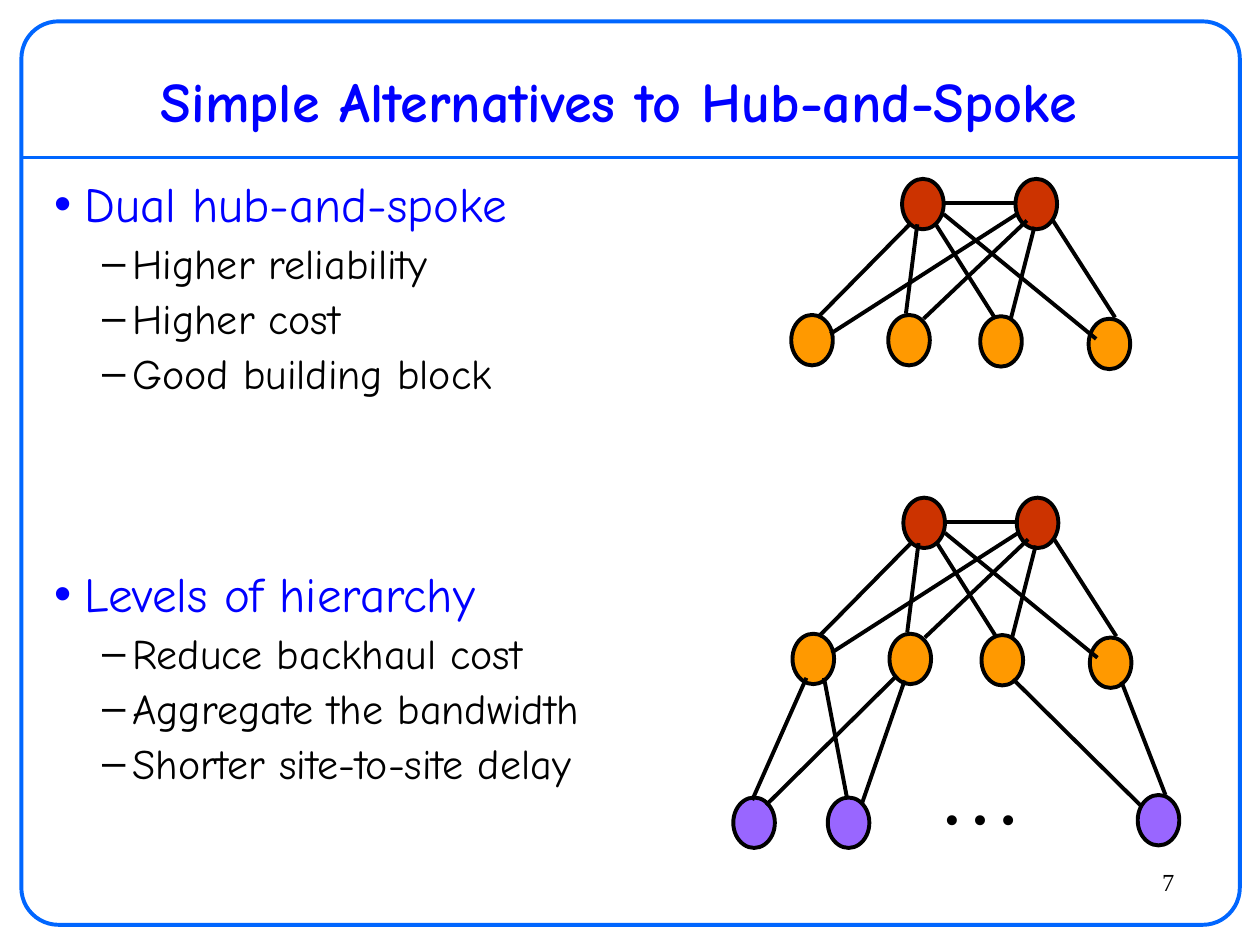
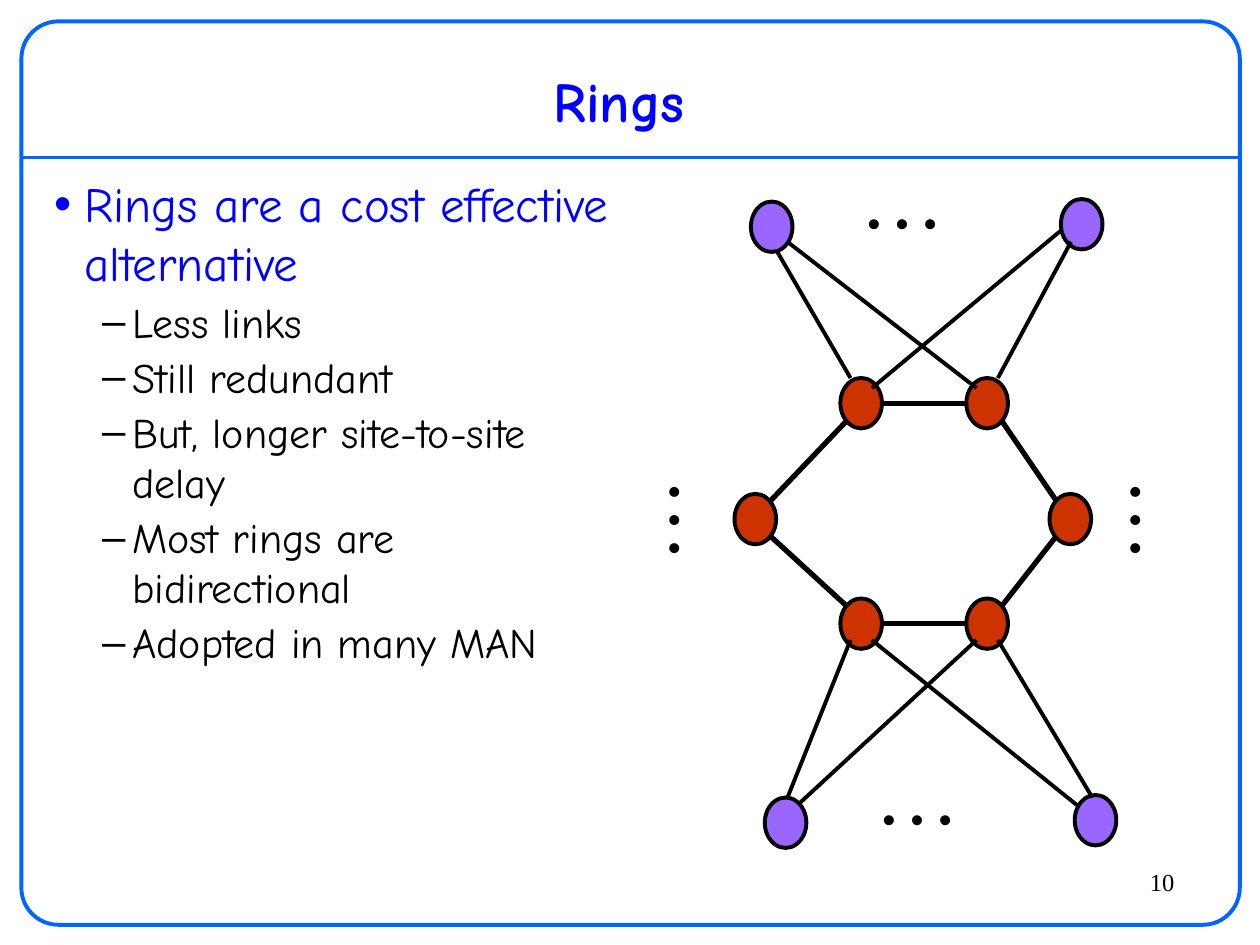
import pptx
import pptx.dml.color
import pptx.enum.shapes
import pptx.enum.text
import pptx.util
from lxml import etree
from pptx.oxml.ns import qn
from pptx.util import Inches, Pt

# Shared style
HEADING_FONT, NUMBER_FONT = "Comic Neue", "Times New Roman"
BLUE, FRAME_BLUE, BLACK = "0000FF", "0066FF", "000000"
HUB, SPOKE, SITE = "CC3300", "FF9900", "9966FF"
NODE_WIDTH, NODE_HEIGHT = 0.33, 0.4
LINK_WIDTH, RING_WIDTH = 2.25, 3
ELLIPSIS_SIZE, VERTICAL_ELLIPSIS_SIZE = (0.87, 0.9), (1.01, 0.77)
# Per list level: bullet, left margin, size, colour, space before
LEVELS = [("•", 0.24, 28, BLUE, 0), ("–", 0.62, 24, BLACK, 2.6)]
HANGING = 0.24
SECTION_GAP = 95

# A pair of hubs serving four spokes; nodes are (left, top)
DUAL_HUB_NODES = {
    HUB: [(7.16, 1.42), (8.06, 1.42)],
    SPOKE: [(6.28, 2.5), (7.05, 2.5), (7.78, 2.51), (8.64, 2.53)],
}
DUAL_HUB_LINKS = [
    (7.5, 1.61, 8.07, 1.61),
    (7.23, 1.77, 6.49, 2.52), (7.28, 1.78, 7.19, 2.49),
    (7.42, 1.77, 7.9, 2.53), (7.49, 1.7, 8.7, 2.69),
    (8.07, 1.7, 6.59, 2.65), (8.15, 1.75, 7.33, 2.53),
    (8.21, 1.8, 8.02, 2.54), (8.35, 1.74, 8.85, 2.52),
]


def shift_nodes(nodes, dx, dy):
    return {color: [(x + dx, y + dy) for x, y in places]
            for color, places in nodes.items()}


def shift_links(links, dx, dy):
    return [(x1 + dx, y1 + dy, x2 + dx, y2 + dy) for x1, y1, x2, y2 in links]


HIERARCHY_SHIFT = (0.01, 2.53)

# Slide content: each diagram is (nodes, [(link width, links)])
SLIDES = [
    {
        "number": "7",
        "title": "Simple Alternatives to Hub-and-Spoke",
        "sections": [
            ("Dual hub-and-spoke",
             ["Higher reliability", "Higher cost", "Good building block"]),
            ("Levels of hierarchy",
             ["Reduce backhaul cost", "Aggregate the bandwidth",
              "Shorter site-to-site delay"]),
        ],
        "diagrams": [
            (DUAL_HUB_NODES, [(LINK_WIDTH, DUAL_HUB_LINKS)]),
            (shift_nodes(DUAL_HUB_NODES, *HIERARCHY_SHIFT),
             [(LINK_WIDTH, shift_links(DUAL_HUB_LINKS, *HIERARCHY_SHIFT))]),
            ({SITE: [(5.82, 6.33), (6.57, 6.33), (9.03, 6.31)]},
             [(LINK_WIDTH, [
                 (6.4, 5.38, 5.97, 6.35), (7.12, 5.36, 6.08, 6.39),
                 (6.54, 5.38, 6.72, 6.32), (7.18, 5.4, 6.84, 6.38),
                 (8.9, 5.41, 9.25, 6.31), (8.04, 5.39, 9.06, 6.4)])]),
        ],
        "ellipses": [(7.35, 5.83)],
        "vertical_ellipses": [],
    },
    {
        "number": "10",
        "title": "Rings",
        "sections": [
            ("Rings are a cost effective alternative",
             ["Less links", "Still redundant",
              "But, longer site-to-site delay",
              "Most rings are bidirectional", "Adopted in many MAN"]),
        ],
        "diagrams": [
            ({HUB: [(6.67, 3), (7.67, 3), (8.33, 3.92),
                    (7.67, 4.75), (6.67, 4.75), (5.83, 3.92)],
              SITE: [(5.96, 1.6), (8.42, 1.58), (6.07, 6.33), (8.53, 6.31)]},
             [(RING_WIDTH, [
                 (7, 3.2, 7.67, 3.2), (7.95, 3.34, 8.38, 3.97),
                 (8.38, 4.26, 7.95, 4.81), (7.67, 4.95, 7, 4.95),
                 (6.72, 4.81, 6.12, 4.26), (6.12, 3.97, 6.72, 3.34)]),
              (LINK_WIDTH, [
                  (6.75, 3, 6.17, 2), (7.75, 3.08, 6.25, 1.92),
                  (7.92, 3, 8.5, 1.92), (6.92, 3.08, 8.42, 1.83),
                  (6.75, 5.08, 6.25, 6.33), (7.75, 5.08, 6.34, 6.38),
                  (7.92, 5.08, 8.67, 6.33), (6.92, 5.08, 8.56, 6.4)])]),
        ],
        "ellipses": [(6.73, 1.1), (6.85, 5.83)],
        "vertical_ellipses": [(4.67, 3.75), (8.33, 3.75)],
    },
]


def rgb(color):
    return pptx.dml.color.RGBColor.from_string(color)


def place(shape, left, top, width, height):
    shape.left, shape.top = Inches(left), Inches(top)
    shape.width, shape.height = Inches(width), Inches(height)


def style_font(paragraph, name, size, color, bold=False):
    font = paragraph.font
    font.name, font.size, font.bold = name, Pt(size), bold
    font.color.rgb = rgb(color)


def style_line(shape, color, width):
    shape.line.color.rgb = rgb(color)
    shape.line.width = Pt(width)


def add_link(slide, start_x, start_y, end_x, end_y, color, width):
    link = slide.shapes.add_connector(
        pptx.enum.shapes.MSO_CONNECTOR.STRAIGHT,
        Inches(start_x), Inches(start_y), Inches(end_x), Inches(end_y))
    style_line(link, color, width)
    etree.SubElement(link.element.spPr, qn("a:effectLst"))
    return link


def add_outline(slide, kind, left, top, width, height, color):
    shape = slide.shapes.add_shape(
        kind, Inches(left), Inches(top), Inches(width), Inches(height))
    shape.shadow.inherit = False
    style_line(shape, color, LINK_WIDTH)
    return shape


def add_label(slide, text, left, top, width, height, size, alignment):
    box = slide.shapes.add_textbox(
        Inches(left), Inches(top), Inches(width), Inches(height))
    paragraph = box.text_frame.paragraphs[0]
    paragraph.text = text
    paragraph.alignment = alignment
    style_font(paragraph, NUMBER_FONT, size, BLACK)
    return box


def add_ellipsis(slide, left, top, size):
    box = add_label(slide, "…", left, top, *size, 48,
                    pptx.enum.text.PP_ALIGN.CENTER)
    box.text_frame.word_wrap = False
    return box


def decorate_layout(layout, slide):
    """Move the frame and title rule to the layout, shared by all slides."""
    frame = add_outline(slide, pptx.enum.shapes.MSO_SHAPE.ROUNDED_RECTANGLE,
                        0.17, 0.17, 9.67, 7.17, FRAME_BLUE)
    frame.adjustments[0] = 0.041
    frame.fill.background()
    rule = add_link(slide, 0.17, 1.25, 9.83, 1.25, FRAME_BLUE, LINK_WIDTH)
    for shape in (rule, frame):
        layout.shapes.element.append(shape.element)
    place(layout.placeholders[0], 0.33, 0.42, 9.17, 0.75)
    place(layout.placeholders[1], 0.33, 1.33, 4.63, 6)


def fill_title(title, text):
    frame = title.text_frame
    frame.text = text
    frame.auto_size = pptx.enum.text.MSO_AUTO_SIZE.NONE
    frame.vertical_anchor = pptx.enum.text.MSO_ANCHOR.MIDDLE
    frame.paragraphs[0].alignment = pptx.enum.text.PP_ALIGN.CENTER
    style_font(frame.paragraphs[0], HEADING_FONT, 32, BLUE, bold=True)


def fill_body(body, sections):
    frame = body.text_frame
    frame.auto_size = pptx.enum.text.MSO_AUTO_SIZE.NONE
    lines = [(text, level) for heading, points in sections
             for text, level in [(heading, 0)] + [(p, 1) for p in points]]
    for index, (text, level) in enumerate(lines):
        bullet, margin, size, color, gap = LEVELS[level]
        paragraph = frame.add_paragraph() if index else frame.paragraphs[0]
        paragraph.text = text
        paragraph.level = level
        paragraph.space_before = Pt(SECTION_GAP if index and not level else gap)
        properties = paragraph._p.get_or_add_pPr()
        properties.set("marL", str(Inches(margin)))
        properties.set("indent", str(-Inches(HANGING)))
        etree.SubElement(properties, qn("a:buChar"), char=bullet)
        style_font(paragraph, HEADING_FONT, size, color)


def draw_diagram(slide, nodes, link_groups):
    for color, places in nodes.items():
        for left, top in places:
            node = add_outline(slide, pptx.enum.shapes.MSO_SHAPE.OVAL,
                               left, top, NODE_WIDTH, NODE_HEIGHT, BLACK)
            node.fill.solid()
            node.fill.fore_color.rgb = rgb(color)
    for width, links in link_groups:
        for ends in links:
            add_link(slide, *ends, BLACK, width)


def main():
    presentation = pptx.Presentation()
    presentation.slide_width, presentation.slide_height = Inches(10), Inches(7.5)
    layout = presentation.slide_layouts[1]

    for index, content in enumerate(SLIDES):
        slide = presentation.slides.add_slide(layout)
        if index == 0:
            decorate_layout(layout, slide)

        # Title, list and slide number
        fill_title(slide.shapes.title, content["title"])
        fill_body(slide.placeholders[1], content["sections"])
        add_label(slide, content["number"], 8.42, 6.83, 1, 0.42, 14,
                  pptx.enum.text.PP_ALIGN.RIGHT)

        # Network diagrams
        for nodes, link_groups in content["diagrams"]:
            draw_diagram(slide, nodes, link_groups)
        for left, top in content["ellipses"]:
            add_ellipsis(slide, left, top, ELLIPSIS_SIZE)
        for left, top in content["vertical_ellipses"]:
            box = add_ellipsis(slide, left, top, VERTICAL_ELLIPSIS_SIZE)
            box.element.txBody.bodyPr.set("vert", "vert270")

    presentation.save("out.pptx")


if __name__ == "__main__":
    main()
